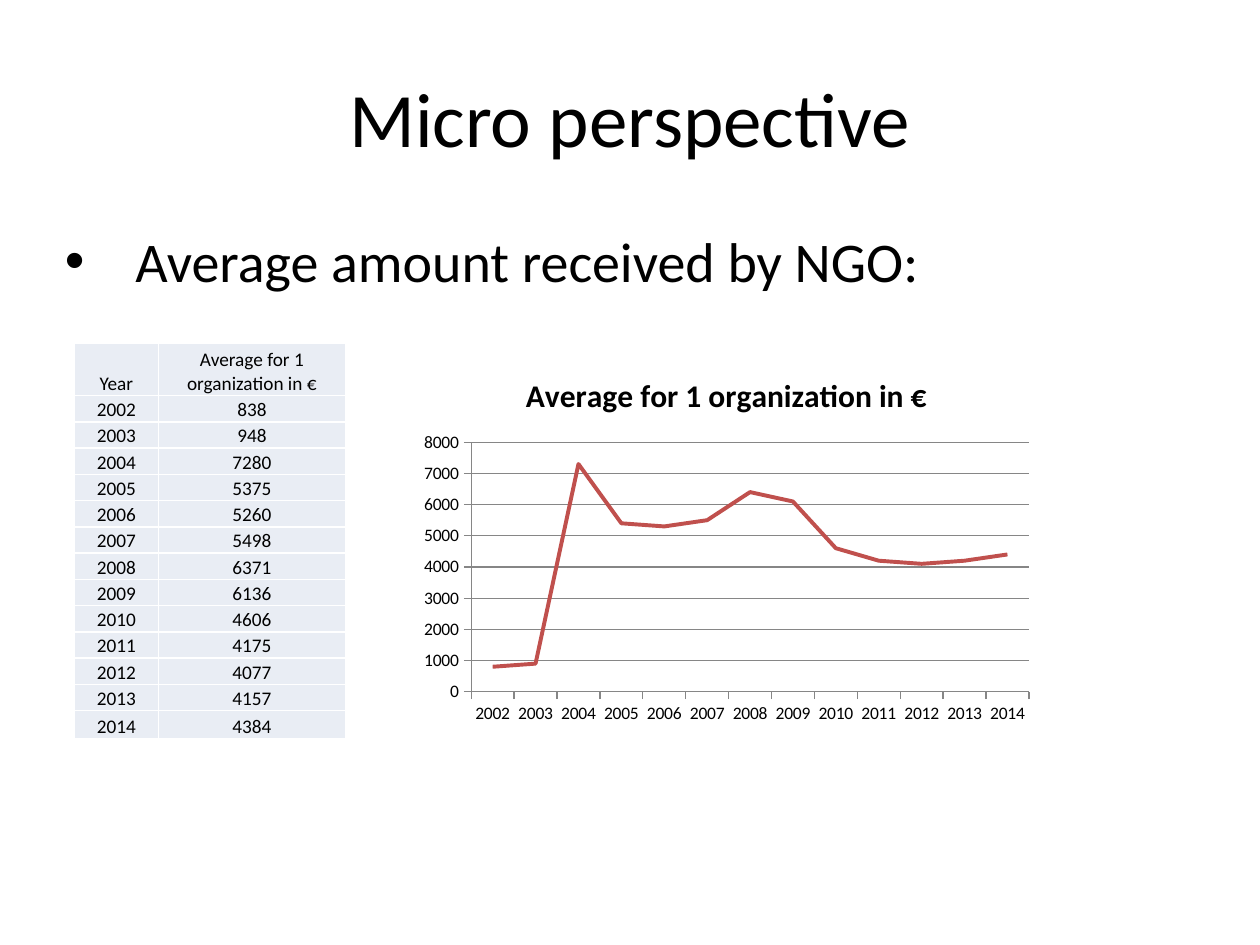
import dataclasses

import lxml.etree
import pptx
import pptx.chart.data
import pptx.dml.color
import pptx.enum.chart
import pptx.enum.text
import pptx.oxml.ns
import pptx.util

Pt = pptx.util.Pt
Align = pptx.enum.text.PP_ALIGN
Anchor = pptx.enum.text.MSO_ANCHOR


@dataclasses.dataclass(frozen=True)
class Theme:
    font: str = "Calibri"
    ink: str = "000000"
    cell: str = "E9EDF4"
    rule: str = "FFFFFF"
    line: str = "C0504D"
    grid: str = "868686"
    title: float = 44
    body: float = 32
    table: float = 11
    label: float = 10
    head: float = 18


def color(code):
    return pptx.dml.color.RGBColor.from_string(code)


def add(parent, tag, **pairs):
    return lxml.etree.SubElement(parent, pptx.oxml.ns.qn(tag), **pairs)


class Page:
    def __init__(self, slide, theme):
        self.slide = slide
        self.theme = theme

    def style(self, font, size, bold=False):
        font.name = self.theme.font
        font.size = Pt(size)
        font.bold = bold
        font.color.rgb = color(self.theme.ink)

    def text(self, words, box, size, align=Align.LEFT, anchor=Anchor.TOP):
        frame = self.slide.shapes.add_textbox(*map(Pt, box)).text_frame
        frame.word_wrap = True
        frame.vertical_anchor = anchor
        para = frame.paragraphs[0]
        para.text = words
        para.alignment = align
        self.style(para.font, size)
        return para

    def bullet(self, words, box, size, indent, hang):
        props = self.text(words, box, size)._p.get_or_add_pPr()
        props.set("marL", str(Pt(indent)))
        props.set("indent", str(-Pt(hang)))
        mark = lxml.etree.Element(pptx.oxml.ns.qn("a:buChar"), char="•")
        font = lxml.etree.Element(pptx.oxml.ns.qn("a:buFont"), typeface="Arial")
        props.insert(0, font)
        props.insert(1, mark)

    def border(self, cell):
        props = cell._tc.get_or_add_tcPr()
        for place, side in enumerate(("a:lnL", "a:lnR", "a:lnT", "a:lnB")):
            line = add(props, side, w=str(Pt(1)))
            add(add(line, "a:solidFill"), "a:srgbClr", val=self.theme.rule)
            props.insert(place, line)

    def table(self, rows, left, top, widths, heights):
        frame = self.slide.shapes.add_table(
            len(rows), len(widths), Pt(left), Pt(top),
            Pt(sum(widths)), Pt(sum(heights)))
        table = frame.table
        table.first_row = table.horz_banding = False
        for col, width in zip(table.columns, widths):
            col.width = Pt(width)
        for row, height, words in zip(table.rows, heights, rows):
            row.height = Pt(height)
            for cell, word in zip(row.cells, words):
                cell.margin_left = cell.margin_right = cell.margin_top = Pt(0.72)
                cell.margin_bottom = 0
                cell.vertical_anchor = Anchor.BOTTOM
                cell.fill.solid()
                cell.fill.fore_color.rgb = color(self.theme.cell)
                self.border(cell)
                para = cell.text_frame.paragraphs[0]
                para.text = str(word)
                para.alignment = Align.CENTER
                self.style(para.font, self.theme.table)

    def chart(self, name, points, box):
        data = pptx.chart.data.CategoryChartData()
        data.categories = [str(year) for year, _ in points]
        data.add_series(name, [round(value, -2) for _, value in points])
        chart = self.slide.shapes.add_chart(
            pptx.enum.chart.XL_CHART_TYPE.LINE, *map(Pt, box), data).chart
        self.style(chart.font, self.theme.label)
        chart.has_legend = False
        chart.has_title = True
        title = chart.chart_title
        title.include_in_layout = False
        para = title.text_frame.paragraphs[0]
        para.text = name
        self.style(para.font, self.theme.head, True)
        plot = chart.plots[0]
        plot.vary_by_categories = False
        line = plot.series[0]
        line.smooth = False
        line.marker.style = pptx.enum.chart.XL_MARKER_STYLE.NONE
        line.format.line.color.rgb = color(self.theme.line)
        line.format.line.width = Pt(2.25)
        scale = chart.value_axis
        scale.minimum_scale = 0
        scale.maximum_scale = 8000
        scale.major_unit = 1000
        scale.has_major_gridlines = True
        chart.category_axis.has_major_gridlines = False
        for part in (scale, chart.category_axis, scale.major_gridlines):
            part.format.line.color.rgb = color(self.theme.grid)
            part.format.line.width = Pt(0.75)
        for axis in (scale, chart.category_axis):
            axis.major_tick_mark = pptx.enum.chart.XL_TICK_MARK.OUTSIDE


def main():
    deck = pptx.Presentation()
    deck.slide_width = Pt(720)
    deck.slide_height = Pt(540)
    theme = Theme()
    page = Page(deck.slides.add_slide(deck.slide_layouts[6]), theme)

    name = "Average for 1 organization in €"
    means = [838, 948, 7280, 5375, 5260, 5498, 6371,
             6136, 4606, 4175, 4077, 4157, 4384]
    points = list(enumerate(means, 2002))

    page.text("Micro perspective", (36, 21.6, 648, 90), theme.title,
              Align.CENTER, Anchor.MIDDLE)
    page.bullet("Average amount received by NGO:", (25.5, 126, 658.5, 356.4),
                theme.body, 44.8, 40.3)
    page.table([("Year", name), *points], 42.5, 196.1, (48, 107),
               [30] + [15] * 12 + [16])
    page.chart(name, points, (235.2, 202, 360, 216))
    deck.save("out.pptx")


if __name__ == "__main__":
    main()
